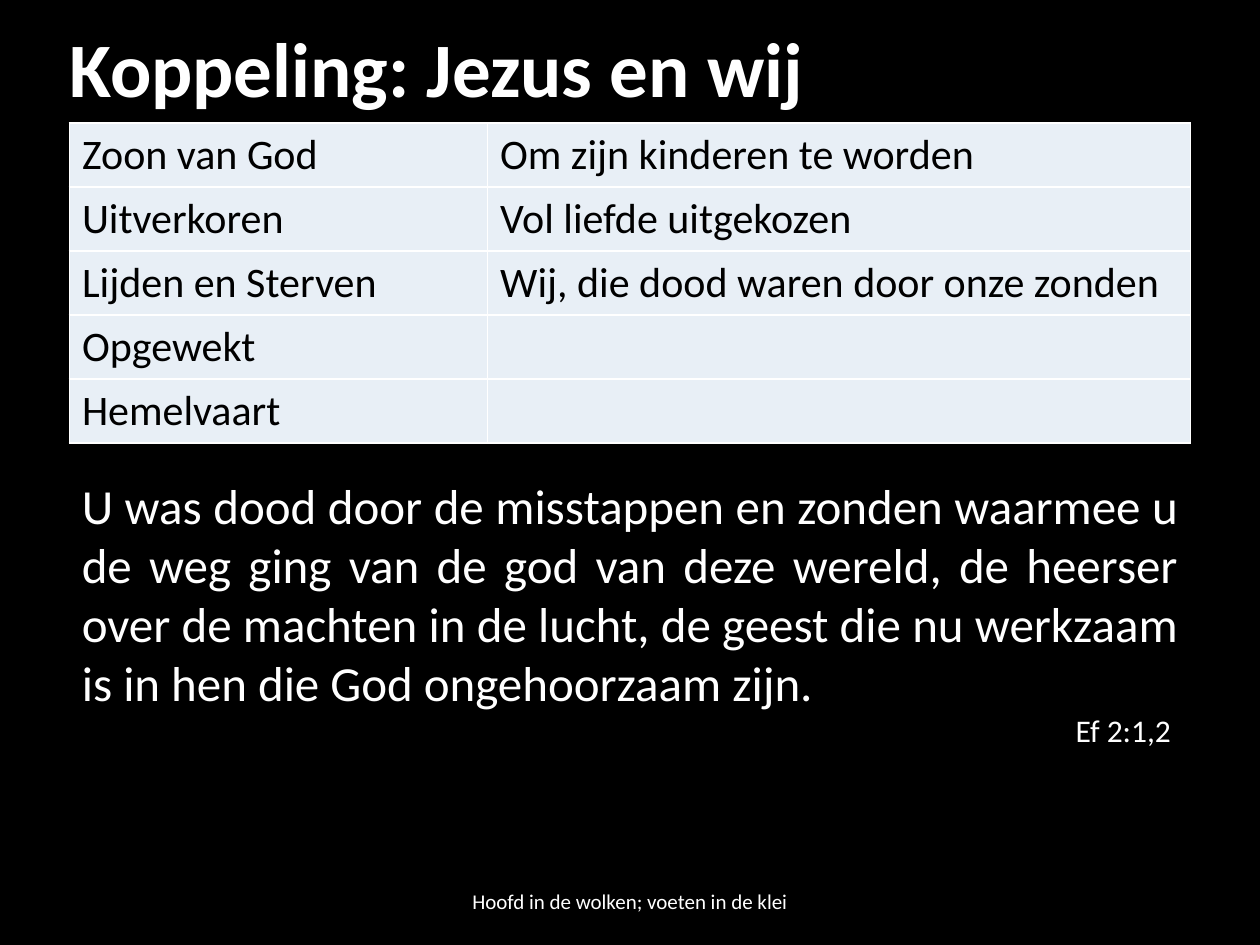
from dataclasses import dataclass

from lxml.etree import SubElement
from pptx import Presentation
from pptx.dml.color import RGBColor
from pptx.enum.text import MSO_ANCHOR, MSO_AUTO_SIZE, PP_ALIGN
from pptx.oxml.ns import qn
from pptx.util import Cm, Pt


@dataclass(frozen=True)
class Theme:
    font: str = "Calibri"
    background: str = "000000"
    light_text: str = "FFFFFF"
    dark_text: str = "000000"
    cell: str = "E8EFF6"
    border: str = "FFFFFF"
    border_width: int = Pt(1)
    title_size: int = 44
    quote_size: int = 28
    cell_size: int = 24
    source_size: int = 18
    footer_size: int = 12


@dataclass(frozen=True)
class Box:
    left: float
    top: float
    width: float
    height: float

    def lengths(self):
        return [Cm(v) for v in (self.left, self.top, self.width, self.height)]


THEME = Theme()

COUPLINGS = [
    ("Zoon van God", "Om zijn kinderen te worden"),
    ("Uitverkoren", "Vol liefde uitgekozen"),
    ("Lijden en Sterven", "Wij, die dood waren door onze zonden"),
    ("Opgewekt", ""),
    ("Hemelvaart", ""),
]
JESUS_SHARE = 0.373

QUOTE = (
    "U was dood door de misstappen en zonden waarmee u de weg ging van de god "
    "van deze wereld, de heerser over de machten in de lucht, de geest die nu "
    "werkzaam is in hen die God ongehoorzaam zijn."
)


def apply_format(target, values):
    for name, value in values.items():
        setattr(target, name, value)


def write(paragraph, text, size, color, align=PP_ALIGN.LEFT, spacing=1.0, bold=False):
    apply_format(paragraph, {"alignment": align, "line_spacing": spacing,
                             "space_before": Pt(0)})
    # An empty cell takes its height from the paragraph end, not from a run.
    if text:
        run = paragraph.add_run()
        run.text = text
        apply_format(run.font, {"name": THEME.font, "size": Pt(size), "bold": bold})
        run.font.color.rgb = RGBColor.from_string(color)
    else:
        SubElement(paragraph._p, qn("a:endParaRPr"), sz=str(size * 100))


def add_title(slide, box, text):
    title = slide.shapes.title
    apply_format(title, dict(zip(("left", "top", "width", "height"), box.lengths())))
    apply_format(title.text_frame, {"auto_size": MSO_AUTO_SIZE.NONE, "word_wrap": True,
                                    "vertical_anchor": MSO_ANCHOR.MIDDLE})
    write(title.text_frame.paragraphs[0], text, THEME.title_size,
          THEME.light_text, spacing=0.9, bold=True)


def add_borders(cell):
    properties = cell._tc.get_or_add_tcPr()
    for position, side in enumerate(("a:lnL", "a:lnR", "a:lnT", "a:lnB")):
        line = properties.makeelement(qn(side), {"w": str(THEME.border_width)})
        fill = SubElement(line, qn("a:solidFill"))
        SubElement(fill, qn("a:srgbClr"), val=THEME.border)
        properties.insert(position, line)


def add_couplings(slide, box, rows):
    table = slide.shapes.add_table(len(rows), 2, *box.lengths()).table
    apply_format(table, {"first_row": False, "horz_banding": False})
    for column, share in zip(table.columns, (JESUS_SHARE, 1 - JESUS_SHARE)):
        column.width = Cm(box.width * share)
    for row, texts in zip(table.rows, rows):
        row.height = Cm(box.height / len(rows))
        for cell, text in zip(row.cells, texts):
            cell.fill.solid()
            cell.fill.fore_color.rgb = RGBColor.from_string(THEME.cell)
            add_borders(cell)
            write(cell.text_frame.paragraphs[0], text, THEME.cell_size, THEME.dark_text)


def add_text_frame(slide, box, anchor):
    frame = slide.shapes.add_textbox(*box.lengths()).text_frame
    apply_format(frame, {"word_wrap": True, "vertical_anchor": anchor})
    return frame


def add_quote(slide, box, quote, source):
    frame = add_text_frame(slide, box, MSO_ANCHOR.TOP)
    frame.auto_size = MSO_AUTO_SIZE.SHAPE_TO_FIT_TEXT
    write(frame.paragraphs[0], quote, THEME.quote_size, THEME.light_text,
          PP_ALIGN.JUSTIFY)
    write(frame.add_paragraph(), source, THEME.source_size, THEME.light_text,
          PP_ALIGN.RIGHT)


def add_footer(slide, box, text):
    frame = add_text_frame(slide, box, MSO_ANCHOR.MIDDLE)
    write(frame.paragraphs[0], text, THEME.footer_size, THEME.light_text,
          PP_ALIGN.CENTER)


def main():
    presentation = Presentation()
    apply_format(presentation, {"slide_width": Cm(25.4), "slide_height": Cm(19.05)})
    slide = presentation.slides.add_slide(presentation.slide_layouts[5])
    background = slide.background.fill
    background.solid()
    background.fore_color.rgb = RGBColor.from_string(THEME.background)

    add_title(slide, Box(1.14, 0.48, 22.5, 1.98), "Koppeling: Jezus en wij")
    add_couplings(slide, Box(1.4, 2.48, 22.6, 6.45), COUPLINGS)
    add_footer(slide, Box(8.4, 17.65, 8.6, 1.02), "Hoofd in de wolken; voeten in de klei")
    add_quote(slide, Box(1.4, 9.47, 22.6, 5.82), QUOTE, "Ef 2:1,2 ")
    presentation.save("out.pptx")


if __name__ == "__main__":
    main()
